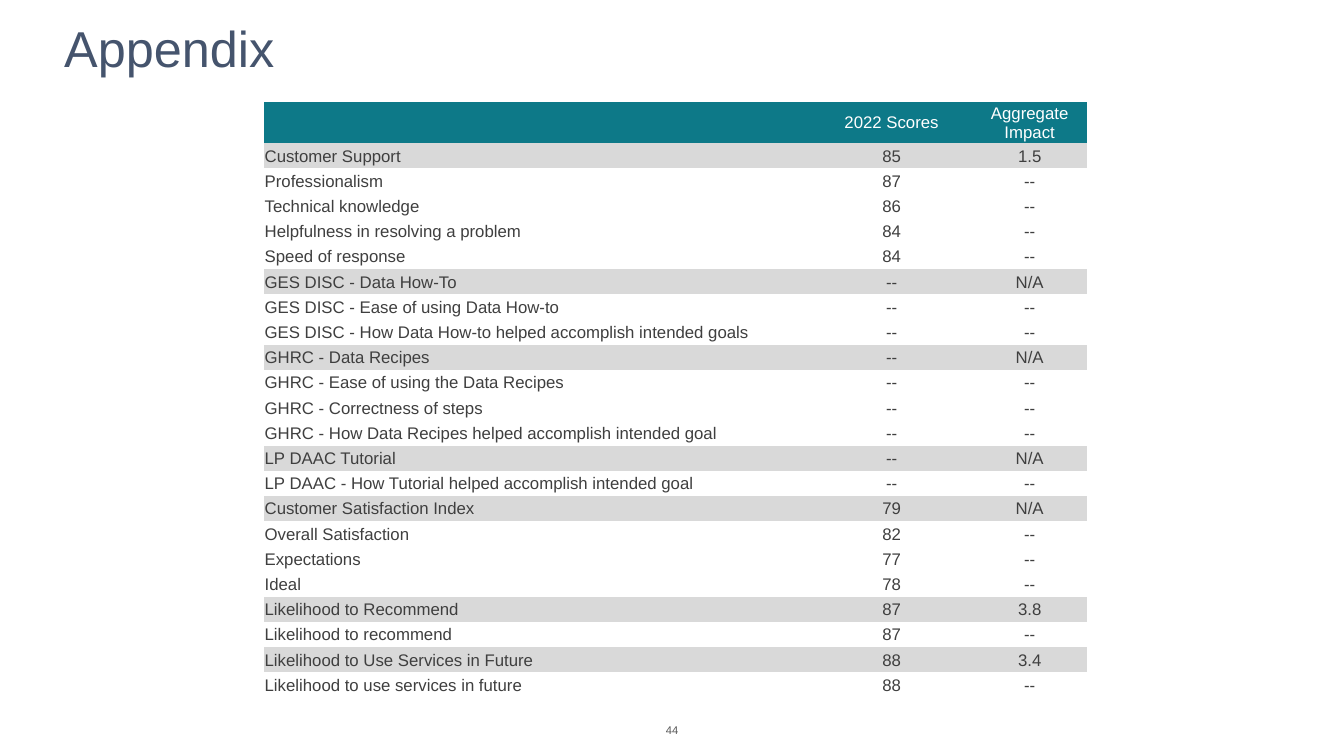
from dataclasses import dataclass

from pptx import Presentation
from pptx.dml.color import RGBColor
from pptx.enum.text import MSO_ANCHOR, PP_ALIGN
from pptx.oxml.ns import qn
from pptx.util import Cm, Pt


@dataclass(frozen=True)
class Theme:
    font: str = "Arial"
    title_color: str = "45546D"
    header_fill: str = "0D7988"
    header_text: str = "FFFFFF"
    group_fill: str = "D9D9D9"
    body_text: str = "3F3F3F"
    number_color: str = "595959"
    title_size: int = 36
    table_size: int = 12
    number_size: int = 8


THEME = Theme()
PLAIN_TABLE_STYLE = "{2D5ABB26-0587-4C30-8999-92F81FD0307C}"
COLUMN_WIDTHS = (13.79, 4.06, 2.9)
HEADER_HEIGHT = 0.97
BODY_HEIGHT = 13.97
HEADER = ("", "2022 Scores", "Aggregate Impact")

SCORE_GROUPS = [
    [
        ("Customer Support", "85", "1.5"),
        ("Professionalism", "87", "--"),
        ("Technical knowledge", "86", "--"),
        ("Helpfulness in resolving a problem", "84", "--"),
        ("Speed of response", "84", "--"),
    ],
    [
        ("GES DISC - Data How-To", "--", "N/A"),
        ("GES DISC - Ease of using Data How-to", "--", "--"),
        ("GES DISC - How Data How-to helped accomplish intended goals", "--", "--"),
    ],
    [
        ("GHRC - Data Recipes", "--", "N/A"),
        ("GHRC - Ease of using the Data Recipes", "--", "--"),
        ("GHRC - Correctness of steps", "--", "--"),
        ("GHRC - How Data Recipes helped accomplish intended goal", "--", "--"),
    ],
    [
        ("LP DAAC Tutorial", "--", "N/A"),
        ("LP DAAC - How Tutorial helped accomplish intended goal", "--", "--"),
    ],
    [
        ("Customer Satisfaction Index", "79", "N/A"),
        ("Overall Satisfaction", "82", "--"),
        ("Expectations", "77", "--"),
        ("Ideal", "78", "--"),
    ],
    [
        ("Likelihood to Recommend", "87", "3.8"),
        ("Likelihood to recommend", "87", "--"),
    ],
    [
        ("Likelihood to Use Services in Future", "88", "3.4"),
        ("Likelihood to use services in future", "88", "--"),
    ],
]


def style_paragraph(para, size, color, align):
    para.alignment = align
    para.font.size = Pt(size)
    for span in para.runs:
        span.font.name = THEME.font
        span.font.size = Pt(size)
        span.font.color.rgb = RGBColor.from_string(color)


def add_text(page, text, left, top, width, height, size, color, align=PP_ALIGN.LEFT):
    box = page.shapes.add_textbox(Cm(left), Cm(top), Cm(width), Cm(height))
    frame = box.text_frame
    frame.word_wrap = True
    frame.vertical_anchor = MSO_ANCHOR.MIDDLE
    frame.text = text
    para = frame.paragraphs[0]
    style_paragraph(para, size, color, align)
    return para


def fill_row(row, values, text_color, fill_color=None):
    for column, (cell, value) in enumerate(zip(row.cells, values)):
        cell.margin_left = cell.margin_right = cell.margin_top = Cm(0.02)
        cell.margin_bottom = Cm(0)
        cell.vertical_anchor = MSO_ANCHOR.MIDDLE
        if fill_color:
            cell.fill.solid()
            cell.fill.fore_color.rgb = RGBColor.from_string(fill_color)
        else:
            cell.fill.background()
        cell.text_frame.text = value
        align = PP_ALIGN.CENTER if column else PP_ALIGN.LEFT
        style_paragraph(cell.text_frame.paragraphs[0], THEME.table_size, text_color, align)


def add_score_table(page, left, top):
    row_count = sum(len(group) for group in SCORE_GROUPS)
    frame = page.shapes.add_table(
        row_count + 1, len(HEADER), Cm(left), Cm(top),
        Cm(sum(COLUMN_WIDTHS)), Cm(HEADER_HEIGHT + BODY_HEIGHT),
    )
    table = frame.table
    table.horz_banding = False
    table._tbl.tblPr.find(qn("a:tableStyleId")).text = PLAIN_TABLE_STYLE
    for column, width in zip(table.columns, COLUMN_WIDTHS):
        column.width = Cm(width)

    rows = iter(table.rows)
    header_row = next(rows)
    header_row.height = Cm(HEADER_HEIGHT)
    fill_row(header_row, HEADER, THEME.header_text, THEME.header_fill)
    for group in SCORE_GROUPS:
        for position, values in enumerate(group):
            row = next(rows)
            row.height = Cm(BODY_HEIGHT / row_count)
            fill_color = THEME.group_fill if position == 0 else None
            fill_row(row, values, THEME.body_text, fill_color)


def main():
    deck = Presentation()
    deck.slide_width = Cm(33.87)
    deck.slide_height = Cm(19.05)
    page = deck.slides.add_slide(deck.slide_layouts[6])
    add_text(page, "44", 15.95, 18.08, 1.98, 0.61,
             THEME.number_size, THEME.number_color, PP_ALIGN.CENTER)
    title = add_text(page, "Appendix", 1.37, 0, 31.32, 2.57,
                     THEME.title_size, THEME.title_color)
    title.line_spacing = 0.9
    add_score_table(page, 6.65, 2.57)
    deck.save("out.pptx")


if __name__ == "__main__":
    main()
